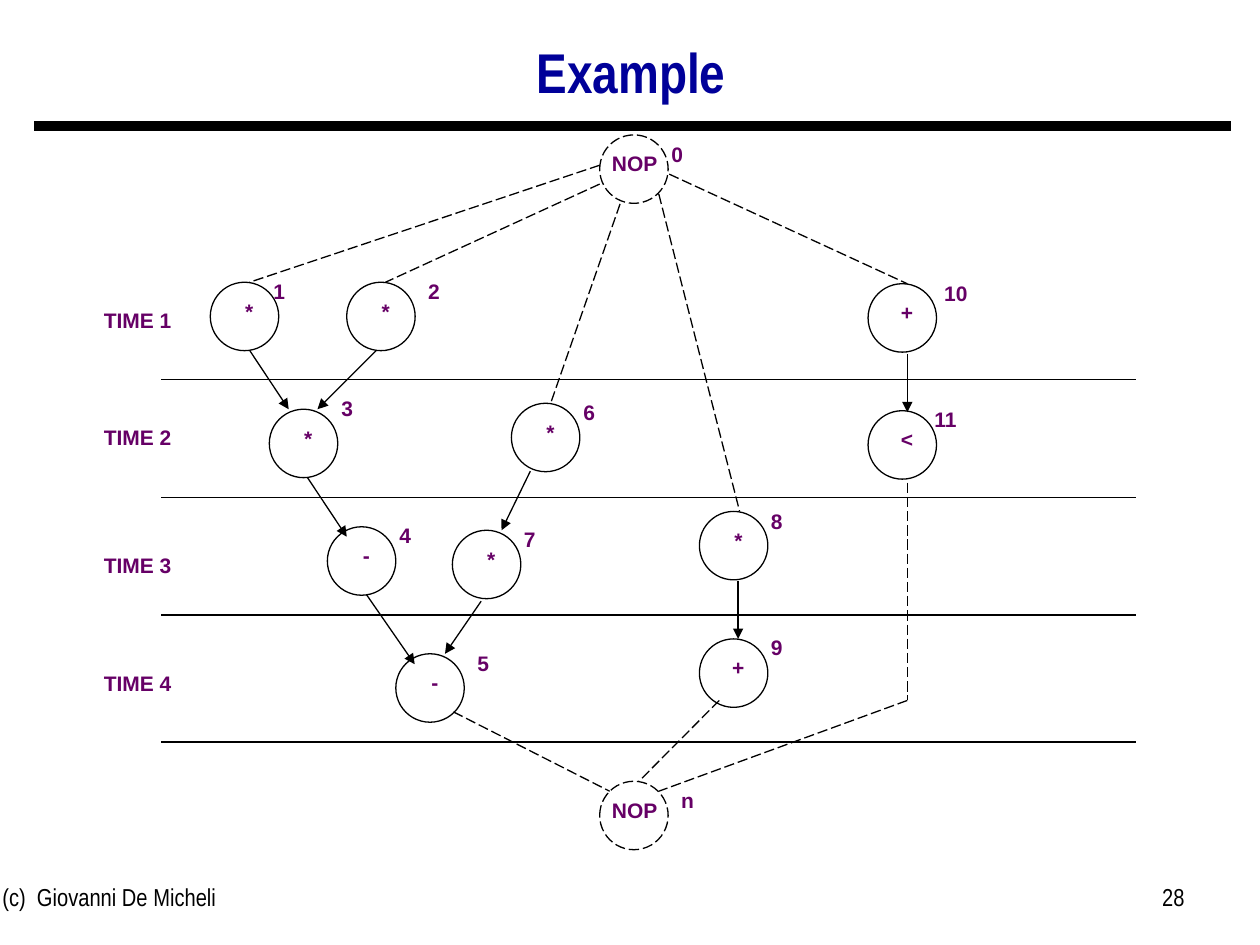
from dataclasses import dataclass

from lxml.etree import SubElement
from pptx import Presentation
from pptx.dml.color import RGBColor
from pptx.enum.dml import MSO_LINE
from pptx.enum.shapes import MSO_CONNECTOR, MSO_SHAPE
from pptx.enum.text import MSO_ANCHOR, PP_ALIGN
from pptx.oxml.ns import qn
from pptx.util import Cm, Pt


@dataclass(frozen=True)
class Theme:
    """Colours, fonts, type sizes and line widths."""
    ink: RGBColor = RGBColor(0x00, 0x00, 0x00)
    title_color: RGBColor = RGBColor(0x00, 0x00, 0x99)
    label_color: RGBColor = RGBColor(0x66, 0x00, 0x66)
    heading_font: str = "Arial Narrow"
    label_font: str = "Arial"
    title_size: int = 32
    footer_size: int = 14
    label_size: int = 12
    thin: float = 0.75
    thick: float = 6


NODE_SIZE = 1.38
LABEL_HEIGHT = 0.76

NODES = [
    ("*", 5.43, 8.25), ("*", 9.12, 10.69), ("+", 14.1, 12.88), ("<", 17.5, 8.28),
    ("-", 6.6, 10.62), ("-", 7.98, 13.18), ("*", 4.24, 5.69), ("*", 6.99, 5.69),
    ("*", 10.31, 8.13), ("*", 14.1, 10.31), ("+", 17.5, 5.72),
]
NOP_LEFT = 12.09
NOP_TOPS = [2.72, 15.75]
STEP_RULES = [7.65, 10.03, 12.4, 14.96]
STEP_LABELS = [6.07, 8.43, 11.02, 13.39]
SOURCE_EDGES = [
    (12.09, 3.33, 5.03, 5.69), (12.09, 3.71, 7.77, 5.69), (12.5, 4.11, 11.1, 8.13),
    (13.28, 3.91, 14.91, 10.31), (13.49, 3.51, 18.29, 5.72),
]
DEPENDENCIES = [
    (5.03, 7.06, 5.82, 8.25), (7.59, 7.06, 6.4, 8.25), (10.69, 9.5, 10.11, 10.69),
    (14.88, 11.71, 14.88, 12.88), (18.29, 7.14, 18.29, 8.31), (6.2, 9.63, 6.99, 10.82),
    (7.39, 11.99, 8.36, 13.39), (9.7, 12.12, 8.97, 13.18),
]
SINK_EDGES = [
    (9.14, 14.35, 12.29, 15.95), (14.5, 14.12, 12.88, 15.75),
    (18.29, 14.12, 13.28, 15.95), (18.29, 9.73, 18.29, 14.12),
]
NODE_NUMBERS = [
    ("0", 12.67, 2.72), ("1", 4.65, 5.49), ("2", 7.77, 5.49), ("3", 6.02, 7.85),
    ("4", 7.19, 10.41), ("5", 8.76, 12.98), ("6", 10.9, 7.92), ("7", 9.7, 10.49),
    ("8", 14.68, 10.13), ("9", 14.68, 12.67), ("10", 18.29, 5.54), ("11", 18.08, 8.08),
    ("n", 12.88, 15.75),
]


class GraphSlide:
    """Draws the parts of a scheduled sequencing graph on one slide."""

    def __init__(self, slide, theme):
        self.slide = slide
        self.theme = theme

    def text(self, text, left, top, width, height, size, color, font,
             bold=False, align=PP_ALIGN.LEFT, anchor=MSO_ANCHOR.TOP, shapes=None):
        """Add a single-paragraph text box."""
        shapes = shapes or self.slide.shapes
        box = shapes.add_textbox(Cm(left), Cm(top), Cm(width), Cm(height))
        frame = box.text_frame
        frame.word_wrap = True
        frame.vertical_anchor = anchor
        frame.text = text
        paragraph = frame.paragraphs[0]
        paragraph.alignment = align
        run_font = paragraph.runs[0].font
        run_font.name = font
        run_font.size = Pt(size)
        run_font.bold = bold
        run_font.color.rgb = color
        return paragraph

    def title(self, text):
        """Add the slide title."""
        theme = self.theme
        paragraph = self.text(text, 1.93, 0.38, 21.59, 2.29, theme.title_size,
                              theme.title_color, theme.heading_font, True,
                              PP_ALIGN.CENTER, MSO_ANCHOR.MIDDLE)
        paragraph.line_spacing = 0.9

    def footer(self, text, left, width, align=PP_ALIGN.LEFT):
        """Add a footer text."""
        theme = self.theme
        self.text(text, left, 17.66, width, 1.32, theme.footer_size,
                  theme.ink, theme.heading_font, align=align)

    def label(self, text, left, top, width, shapes=None):
        """Add a bold centred graph label."""
        theme = self.theme
        self.text(text, left, top, width, LABEL_HEIGHT, theme.label_size,
                  theme.label_color, theme.label_font, True,
                  PP_ALIGN.CENTER, shapes=shapes)

    def node(self, text, left, top, dashed=False, label_shift=0, label_width=1.57):
        """Add a circle grouped with its operation label."""
        shapes = self.slide.shapes.add_group_shape().shapes
        circle = shapes.add_shape(MSO_SHAPE.OVAL, Cm(left), Cm(top),
                                  Cm(NODE_SIZE), Cm(NODE_SIZE))
        circle.shadow.inherit = False
        circle.fill.background()
        self.stroke(circle.line, self.theme.thin, dashed)
        self.label(text, left + label_shift, top + 0.2, label_width, shapes)

    def stroke(self, line, width, dashed=False):
        """Set the colour, width and dash of a line."""
        line.color.rgb = self.theme.ink
        line.width = Pt(width)
        if dashed:
            line.dash_style = MSO_LINE.LONG_DASH

    def line(self, start_x, start_y, end_x, end_y, width=None, dashed=False, arrow=False):
        """Add a straight line, optionally dashed or with an arrowhead."""
        connector = self.slide.shapes.add_connector(
            MSO_CONNECTOR.STRAIGHT, Cm(start_x), Cm(start_y), Cm(end_x), Cm(end_y))
        self.stroke(connector.line, width or self.theme.thin, dashed)
        properties = connector._element.spPr
        if arrow:
            SubElement(properties.find(qn("a:ln")), qn("a:tailEnd"), type="triangle")
        SubElement(properties, qn("a:effectLst"))


def main():
    """Build the slide and save it."""
    presentation = Presentation()
    presentation.slide_width = Cm(25.4)
    presentation.slide_height = Cm(19.05)
    theme = Theme()
    graph = GraphSlide(presentation.slides.add_slide(presentation.slide_layouts[6]), theme)

    graph.line(0.69, 2.54, 24.82, 2.54, theme.thick)
    graph.footer("(c)  Giovanni De Micheli", -0.2, 8.05)
    graph.footer("28", 18.21, 5.92, PP_ALIGN.RIGHT)
    graph.title("Example")

    for operation, left, top in NODES:
        graph.node(operation, left, top)
    for top in NOP_TOPS:
        graph.node("NOP", NOP_LEFT, top, dashed=True, label_shift=-0.58, label_width=2.57)
    for height in STEP_RULES:
        graph.line(3.25, height, 22.91, height)
    for edge in SOURCE_EDGES + SINK_EDGES:
        graph.line(*edge, dashed=True)
    for edge in DEPENDENCIES:
        graph.line(*edge, arrow=True)
    for number, left, top in NODE_NUMBERS:
        graph.label(number, left, top, 1.96)
    for step, top in enumerate(STEP_LABELS, start=1):
        graph.label(f"TIME {step}", 1.3, top, 2.95)

    presentation.save("out.pptx")


if __name__ == "__main__":
    main()
